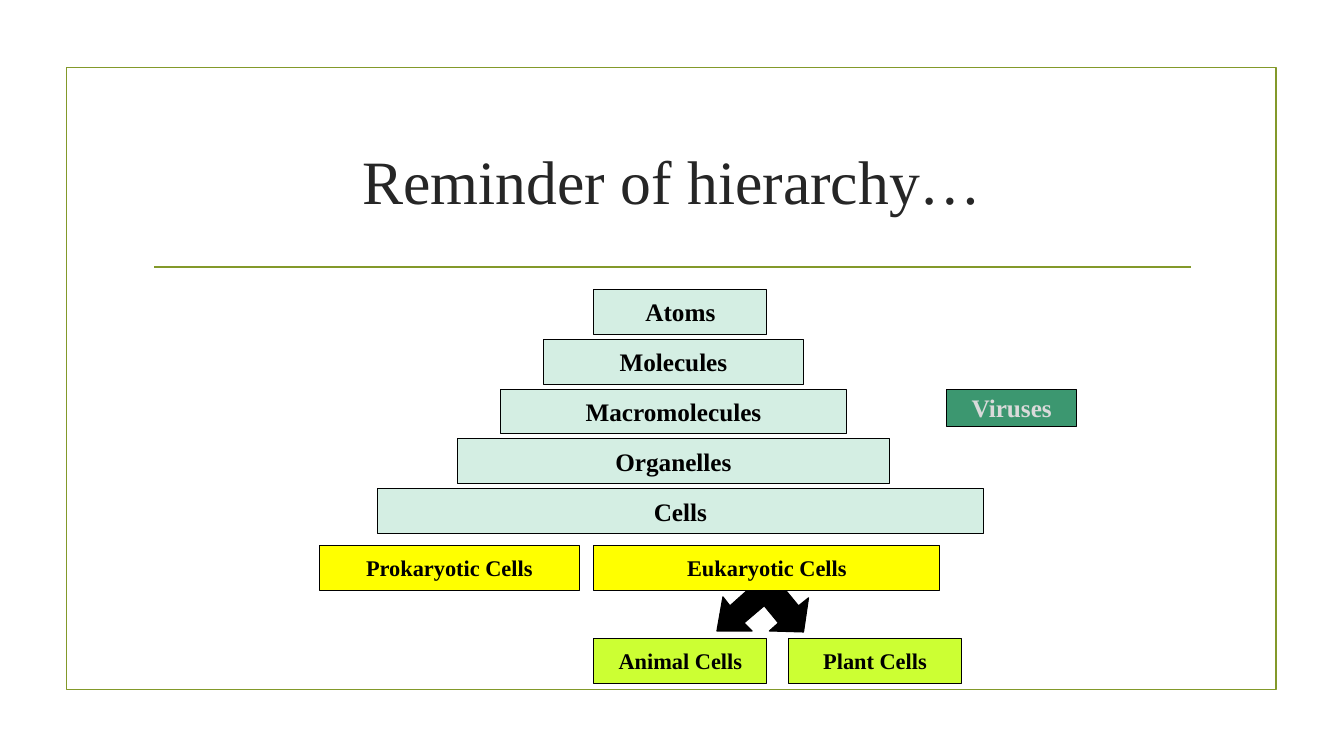
from dataclasses import dataclass

from lxml.etree import SubElement
from pptx import Presentation
from pptx.dml.color import RGBColor
from pptx.enum.shapes import MSO_CONNECTOR as Connector, MSO_SHAPE as Preset
from pptx.enum.text import MSO_ANCHOR as Anchor, PP_ALIGN as Align
from pptx.oxml.ns import qn
from pptx.util import Inches, Pt

COLORS = {
    "frame": "83992A",
    "title": "262626",
    "black": "000000",
    "level": "D4EEE3",
    "cell_type": "FFFF00",
    "eukaryote": "CCFF33",
    "virus": "3C9770",
    "virus_text": "DADADA",
}
FONT = "Times New Roman"
GRID_LEFT, GRID_TOP = 5.89, 2.87
COLUMN, ROW = 4.29 / 5, 0.99 / 2
ARROW_UNIT = Inches(0.01)
ARROW_POINTS = [
    (810, 542), (776, 542), (783, 551), (763, 567), (749, 550), (758, 542),
    (724, 542), (719, 575), (729, 567), (743, 584), (724, 601), (717, 592),
    (711, 626), (746, 626), (738, 618), (758, 601), (772, 618), (763, 626),
    (797, 627), (802, 593), (792, 601), (778, 584), (797, 568), (804, 576),
]


@dataclass(frozen=True)
class Box:
    label: str
    column: float
    row: float
    columns: float
    fill: str = "level"
    size: int = 18
    color: str = "black"
    rows: float = 0.9


BOXES = [
    Box("Atoms", 0, 0, 2),
    Box("Molecules", -0.58, 1, 3),
    Box("Macromolecules", -1.08, 2, 4),
    Box("Organelles", -1.58, 3, 5),
    Box("Cells", -2.5, 4, 7),
    Box("Eukaryotic Cells", 0, 5.13, 4, "cell_type", 16),
    Box("Prokaryotic Cells", -3.17, 5.13, 3, "cell_type", 16),
    Box("Animal Cells", 0, 7, 2, "eukaryote", 16),
    Box("Plant Cells", 2.25, 7, 2, "eukaryote", 16),
    Box("Viruses", 4.08, 2, 1.5, "virus", 18, "virus_text", 0.75),
]


def rgb(name: str) -> RGBColor:
    return RGBColor.from_string(COLORS[name])


def write_text(shape, text: str, *, size: int, color: str, bold: bool = False,
               wrap: bool = False) -> None:
    frame = shape.text_frame
    frame.word_wrap = wrap
    frame.vertical_anchor = Anchor.MIDDLE
    paragraph = frame.paragraphs[0]
    paragraph.alignment = Align.CENTER
    run = paragraph.add_run()
    run.text = text
    run.font.name = FONT
    run.font.size = Pt(size)
    run.font.bold = bold
    run.font.color.rgb = rgb(color)


def format_shape(shape, *, fill: str | None, line: str, width: float) -> None:
    shape.shadow.inherit = False
    if fill:
        shape.fill.solid()
        shape.fill.fore_color.rgb = rgb(fill)
    else:
        shape.fill.background()
    shape.line.color.rgb = rgb(line)
    shape.line.width = Pt(width)


def add_frame(slide) -> None:
    frame = slide.shapes.add_shape(
        Preset.RECTANGLE, Inches(0.66), Inches(0.67), Inches(12), Inches(6.17))
    format_shape(frame, fill=None, line="frame", width=1.25)
    rule = slide.shapes.add_connector(
        Connector.STRAIGHT, Inches(1.53), Inches(2.65), Inches(11.81), Inches(2.65))
    rule.line.color.rgb = rgb("frame")
    rule.line.width = Pt(1.25)
    SubElement(rule._element.spPr, qn("a:effectLst"))


def add_title(slide, text: str) -> None:
    title = slide.shapes.title
    title.left, title.top = Inches(1.42), Inches(1.07)
    title.width, title.height = Inches(10.5), Inches(1.43)
    write_text(title, text, size=44, color="title", wrap=True)


def add_arrows(slide) -> None:
    start, *others = ARROW_POINTS
    builder = slide.shapes.build_freeform(*start, scale=ARROW_UNIT)
    builder.add_line_segments(others, close=True)
    format_shape(builder.convert_to_shape(), fill="black", line="black", width=0.75)


def add_box(slide, box: Box) -> None:
    shape = slide.shapes.add_shape(
        Preset.RECTANGLE,
        Inches(GRID_LEFT + box.column * COLUMN),
        Inches(GRID_TOP + box.row * ROW),
        Inches(box.columns * COLUMN),
        Inches(box.rows * ROW),
    )
    format_shape(shape, fill=box.fill, line="black", width=0.75)
    write_text(shape, box.label, size=box.size, color=box.color, bold=True)


def main() -> None:
    presentation = Presentation()
    presentation.slide_width = Inches(13.33)
    presentation.slide_height = Inches(7.5)
    slide = presentation.slides.add_slide(presentation.slide_layouts.get_by_name("Title Only"))
    add_frame(slide)
    add_title(slide, "Reminder of hierarchy…")
    add_arrows(slide)
    for box in BOXES:
        add_box(slide, box)
    presentation.save("out.pptx")


if __name__ == "__main__":
    main()
